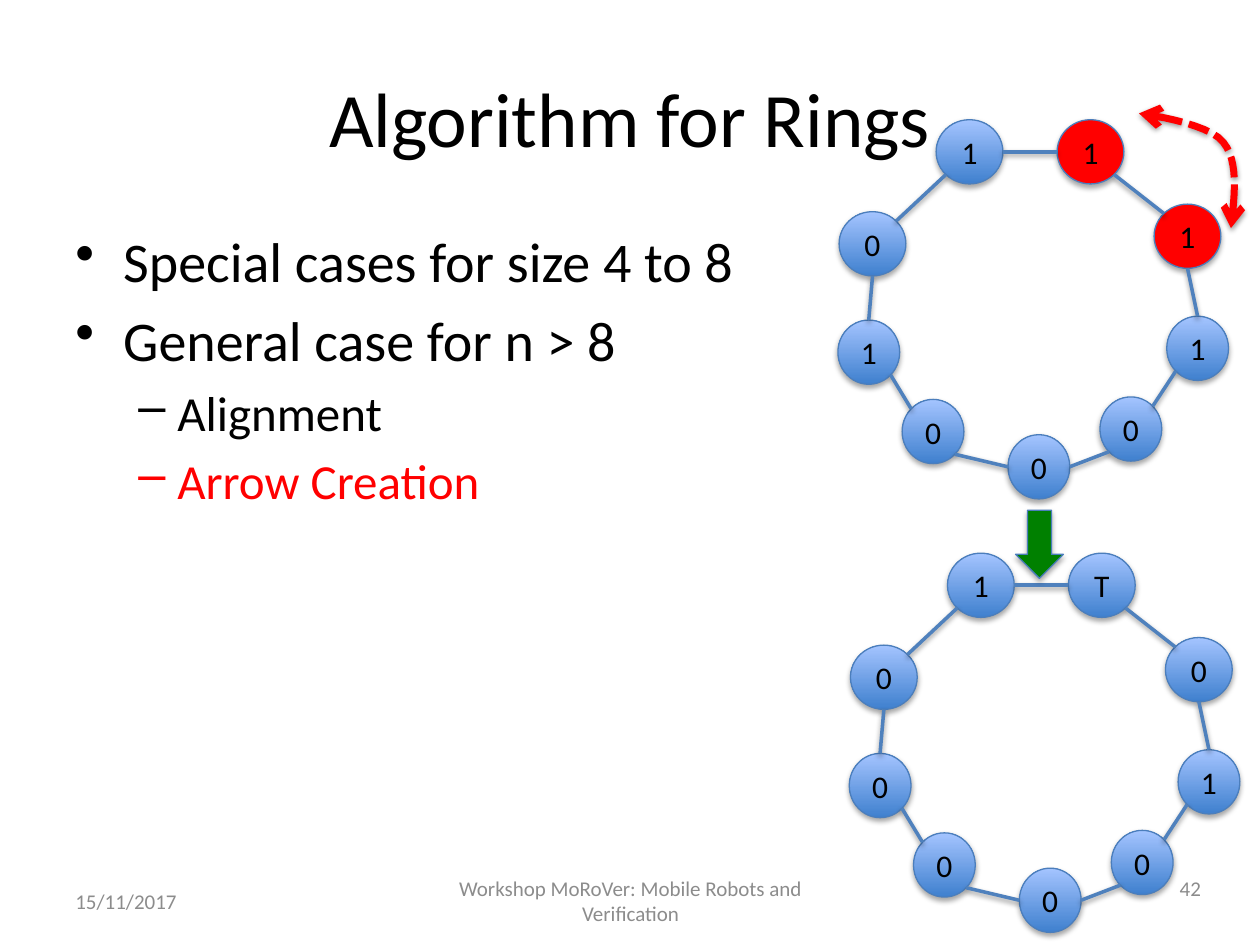
from math import hypot

from lxml.etree import SubElement
from pptx import Presentation
from pptx.dml.color import RGBColor
from pptx.enum.dml import MSO_LINE
from pptx.enum.shapes import MSO_CONNECTOR, MSO_SHAPE
from pptx.enum.text import MSO_ANCHOR, PP_ALIGN
from pptx.oxml.ns import qn
from pptx.util import Inches, Pt

TITLE = "Algorithm for Rings"
BULLETS = [
    ("Special cases for size 4 to 8", 0, "000000"),
    ("General case for n > 8", 0, "000000"),
    ("Alignment", 1, "000000"),
    ("Arrow Creation", 1, "FF0000"),
]
BULLET_STYLES = [("•", 32, 0.38, 0.38), ("–", 28, 0.81, 0.31)]
FOOTERS = [
    ("15/11/2017", 0.5, 6.95, 2.33, PP_ALIGN.LEFT),
    ("Workshop MoRoVer: Mobile Robots and Verification", 3.42, 6.95, 3.17, PP_ALIGN.CENTER),
    ("42", 7.3, 6.85, 2.33, PP_ALIGN.RIGHT),
]
NODE_HEIGHT = 0.51
NODES = [
    (7.43, 0.95, 0.53), (8.39, 0.95, 0.53), (9.16, 1.62, 0.53),
    (9.26, 2.51, 0.49), (8.73, 3.15, 0.49), (8, 3.45, 0.49),
    (7.16, 3.17, 0.49), (6.65, 2.54, 0.49), (6.66, 1.68, 0.53),
]
EDGE_SIDES = [
    ((1, 0), (-1, 0)), ((1, 1), (-1, -1)), ((0, 1), (0, -1)),
    ((-1, 1), (1, -1)), ((-1, 1), (1, 0)), ((-1, 0), (1, 1)),
    ((-1, -1), (1, 1)), ((0, -1), (0, 1)), ((1, -1), (-1, 1)),
]
RINGS = [
    ("111100010", {1, 2}, 0, 0),
    ("1T0100000", set(), 0.09, 3.44),
]
SWAP_CURVES = [
    [(9.77, 1.81), (9.8, 1.54), (9.83, 1.28), (9.71, 1.13)],
    [(9.71, 1.13), (9.59, 0.97), (9.04, 0.9), (9.04, 0.9)],
]


def rgb(value):
    return RGBColor.from_string(value)


def set_font(paragraph, size, color):
    font = paragraph.font
    font.name, font.size = "Calibri", Pt(size)
    font.color.rgb = rgb(color)


def add_shadow(shape, opacity, distance):
    shape_props = shape._element.spPr
    for old in shape_props.findall(qn("a:effectLst")):
        shape_props.remove(old)
    effects = SubElement(shape_props, qn("a:effectLst"))
    outer = SubElement(effects, qn("a:outerShdw"), blurRad=str(Pt(3.1)),
                       dist=str(Pt(distance)), dir="5400000", rotWithShape="0")
    color = SubElement(outer, qn("a:srgbClr"), val="000000")
    SubElement(color, qn("a:alpha"), val=str(opacity * 1000))


def add_filled(slide, kind, box, fill=None):
    shape = slide.shapes.add_shape(kind, *map(Inches, box))
    if fill:
        shape.fill.solid()
        shape.fill.fore_color.rgb = rgb(fill)
    else:
        shape.fill.gradient()
        shape.fill.gradient_angle = 90
        for stop, color in zip(shape.fill.gradient_stops, ("3F80CE", "A4C4FF")):
            stop.color.rgb = rgb(color)
    shape.line.color.rgb = rgb("4B7EBC")
    shape.line.width = Pt(0.75)
    add_shadow(shape, 35, 1.8)
    return shape


def add_text(slide, box):
    frame = slide.shapes.add_textbox(*map(Inches, box)).text_frame
    frame.word_wrap = True
    return frame


def add_bullets(slide):
    frame = add_text(slide, (0.5, 1.75, 9, 3.04))
    for index, (text, level, color) in enumerate(BULLETS):
        paragraph = frame.add_paragraph() if index else frame.paragraphs[0]
        mark, size, margin, hanging = BULLET_STYLES[level]
        paragraph.text, paragraph.level = text, level
        set_font(paragraph, size, color)
        paragraph.space_before = Pt(size * 0.2)
        props = paragraph._p.get_or_add_pPr()
        props.set("marL", str(Inches(margin)))
        props.set("indent", str(-Inches(hanging)))
        bullet = props.makeelement(qn("a:buChar"), {"char": mark})
        props.find(qn("a:defRPr")).addprevious(bullet)


def add_footers(slide):
    for text, left, top, width, align in FOOTERS:
        frame = add_text(slide, (left, top, width, 0.4))
        frame.vertical_anchor = MSO_ANCHOR.MIDDLE
        paragraph = frame.paragraphs[0]
        paragraph.text, paragraph.alignment = text, align
        set_font(paragraph, 12, "8C8C8C")


def rim_point(node, side):
    left, top, width = node
    dx, dy = side
    reach = 2 * hypot(dx, dy)
    return (left + width / 2 + dx * width / reach,
            top + NODE_HEIGHT / 2 + dy * NODE_HEIGHT / reach)


def add_ring(slide, labels, red_nodes, shift_x, shift_y):
    nodes = [(x + shift_x, y + shift_y, width) for x, y, width in NODES]
    for index, (label, (left, top, width)) in enumerate(zip(labels, nodes)):
        circle = add_filled(slide, MSO_SHAPE.OVAL, (left, top, width, NODE_HEIGHT),
                            "FF0000" if index in red_nodes else None)
        frame = circle.text_frame
        frame.vertical_anchor = MSO_ANCHOR.MIDDLE
        paragraph = frame.paragraphs[0]
        paragraph.text, paragraph.alignment = label, PP_ALIGN.CENTER
        set_font(paragraph, 18, "000000")
    for node, following, (start, end) in zip(nodes, nodes[1:] + nodes[:1], EDGE_SIDES):
        ends = rim_point(node, start) + rim_point(following, end)
        edge = slide.shapes.add_connector(MSO_CONNECTOR.STRAIGHT, *map(Inches, ends))
        edge.line.color.rgb = rgb("4F81BD")
        edge.line.width = Pt(2)
        add_shadow(edge, 38, 1.6)


def bezier(curve, t):
    weights = ((1 - t) ** 3, 3 * t * (1 - t) ** 2, 3 * t * t * (1 - t), t ** 3)
    return tuple(Inches(sum(w * value for w, value in zip(weights, axis)))
                 for axis in zip(*curve))


def add_swap_arrow(slide, steps=12):
    points = [bezier(curve, step / steps)
              for curve in SWAP_CURVES for step in range(1, steps + 1)]
    builder = slide.shapes.build_freeform(*bezier(SWAP_CURVES[0], 0))
    builder.add_line_segments(points, close=False)
    arrow = builder.convert_to_shape()
    arrow.fill.background()
    arrow.line.color.rgb = rgb("FF0000")
    arrow.line.width = Pt(4)
    arrow.line.dash_style = MSO_LINE.SQUARE_DOT
    for end in ("a:headEnd", "a:tailEnd"):
        SubElement(arrow.line._get_or_add_ln(), qn(end), type="arrow")
    add_shadow(arrow, 38, 1.6)


def main():
    """Build the slide on ring algorithms."""
    deck = Presentation()
    deck.slide_width, deck.slide_height = Inches(10), Inches(7.5)
    slide = deck.slides.add_slide(deck.slide_layouts[5])
    title = slide.shapes.title
    title.left, title.top, title.width, title.height = map(Inches, (0.5, 0.3, 9, 1.25))
    title.text_frame.text = TITLE
    set_font(title.text_frame.paragraphs[0], 44, "000000")
    add_bullets(slide)
    add_footers(slide)
    add_swap_arrow(slide)
    for ring in RINGS:
        add_ring(slide, *ring)
    add_filled(slide, MSO_SHAPE.DOWN_ARROW, (8.06, 4.05, 0.38, 0.54), "008000")
    deck.save("out.pptx")


if __name__ == "__main__":
    main()
